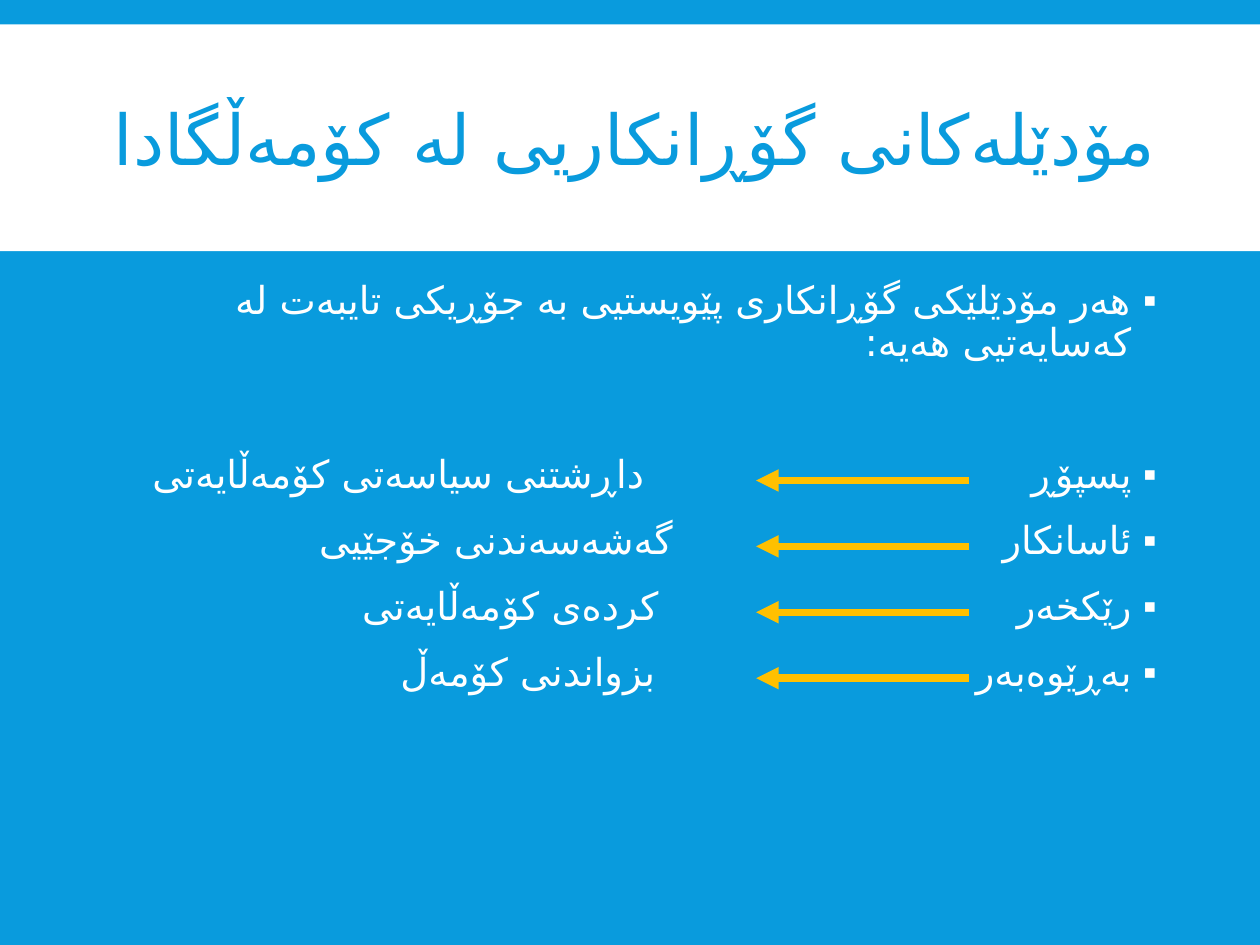
from lxml import etree
from pptx import Presentation
from pptx.dml.color import RGBColor
from pptx.enum.shapes import MSO_CONNECTOR, MSO_SHAPE
from pptx.enum.text import MSO_ANCHOR, MSO_AUTO_SIZE, PP_ALIGN
from pptx.oxml.ns import qn
from pptx.util import Cm, Pt

RECT = MSO_SHAPE.RECTANGLE
LINE = MSO_CONNECTOR.STRAIGHT
RIGHT = PP_ALIGN.RIGHT
TOP, MIDDLE = MSO_ANCHOR.TOP, MSO_ANCHOR.MIDDLE
FIXED = MSO_AUTO_SIZE.NONE

FONT, SCRIPT = "Calibri", "DejaVu Sans"
BLUE, WHITE, GOLD = "099BDD", "FFFFFF", "FFC000"
WIDE, HIGH = 35.56, 26.67
PITCH = 1.86

TITLE = "مۆدێلەکانی گۆڕانکاریی لە کۆمەڵگادا"
LEAD = "هەر مۆدێلێکی گۆڕانکاری پێویستیی بە جۆڕیکی تایبەت لە کەسایەتیی هەیە:"
ROLES = [
    ("پسپۆڕ", "داڕشتنی سیاسەتی کۆمەڵایەتی", 14.45),
    ("ئاسانکار", "گەشەسەندنی خۆجێیی", 13.65),
    ("رێکخەر", "کردەی کۆمەڵایەتی", 14.05),
    ("بەڕێوەبەر", "بزواندنی کۆمەڵ", 14.15),
]


def paint(color, tone):
    color.rgb = RGBColor.from_string(tone)


def fill(item, tone):
    item.fill.solid()
    paint(item.fill.fore_color, tone)


def add(node, tag, **attrs):
    return etree.SubElement(node, qn(tag), attrs)


def place(shape, left, top, width, height):
    shape.left, shape.top = Cm(left), Cm(top)
    shape.width, shape.height = Cm(width), Cm(height)


def style(para, size, tone, bold, space):
    para.alignment = RIGHT
    para.line_spacing = space
    para._p.get_or_add_pPr().set("rtl", "1")
    for run in para.runs:
        font = run.font
        font.size, font.bold, font.name = Pt(size), bold, FONT
        paint(font.color, tone)
        add(font._element, "a:cs", typeface=SCRIPT)


def bullet(para):
    props = para._p.get_or_add_pPr()
    props.set("marR", "0")
    props.set("marL", str(Cm(0.71)))
    props.set("indent", str(-Cm(0.71)))
    add(add(props, "a:buClr"), "a:srgbClr", val=WHITE)
    add(props, "a:buFont", typeface="Arial")
    add(props, "a:buChar", char="▪")


def tab(para, stop):
    props = para._p.get_or_add_pPr()
    add(add(props, "a:tabLst"), "a:tab", pos=str(Cm(stop)), algn="r")


def header(slide, left, top, width, height):
    title = slide.shapes.title
    band = slide.shapes.add_shape(RECT, Cm(left), Cm(top), Cm(width), Cm(height))
    band.shadow.inherit = False
    fill(band, WHITE)
    band.line.fill.background()
    title.element.addprevious(band.element)
    place(title, left + 2.67, top + 0.43, width - 5.33, height - 0.53)
    frame = title.text_frame
    frame.text = TITLE
    frame.auto_size, frame.vertical_anchor = FIXED, MIDDLE
    style(frame.paragraphs[0], 56, BLUE, False, 0.85)


def arrow(slide, start, end, y):
    line = slide.shapes.add_connector(LINE, Cm(start), Cm(y), Cm(end), Cm(y))
    line.line.width = Pt(6)
    paint(line.line.color, GOLD)
    add(line.line._get_or_add_ln(), "a:tailEnd", type="triangle")
    add(line.element.spPr, "a:effectLst")


def body(slide, left, top, width, height):
    box = slide.placeholders[1]
    place(box, left, top, width, height)
    frame = box.text_frame
    frame.text = "\n".join([LEAD] + [f"{role}\t{task}" for role, task, _ in ROLES])
    frame.auto_size, frame.vertical_anchor = FIXED, TOP
    lead, *rows = frame.paragraphs
    for para in frame.paragraphs:
        first = para is lead
        style(para, 30.8, GOLD if first else WHITE, first, 0.9)
        para.space_before, para.space_after = Pt(16.8), Pt(2.8)
        bullet(para)
    lead.space_before = Pt(0)
    rows[0].space_before = Pt(69.6)
    for row, (para, (_, _, stop)) in enumerate(zip(rows, ROLES)):
        tab(para, stop)
        arrow(slide, left + 24.69, left + 18.67, top + 5.74 + row * PITCH)


def main():
    deck = Presentation()
    deck.slide_width, deck.slide_height = Cm(WIDE), Cm(HIGH)
    slide = deck.slides.add_slide(deck.slide_layouts[1])
    fill(slide.background, BLUE)
    header(slide, 0, 0.69, WIDE, 6.4)
    body(slide, 2.67, 7.82, 30.23, 16.36)
    deck.save("out.pptx")


if __name__ == "__main__":
    main()
